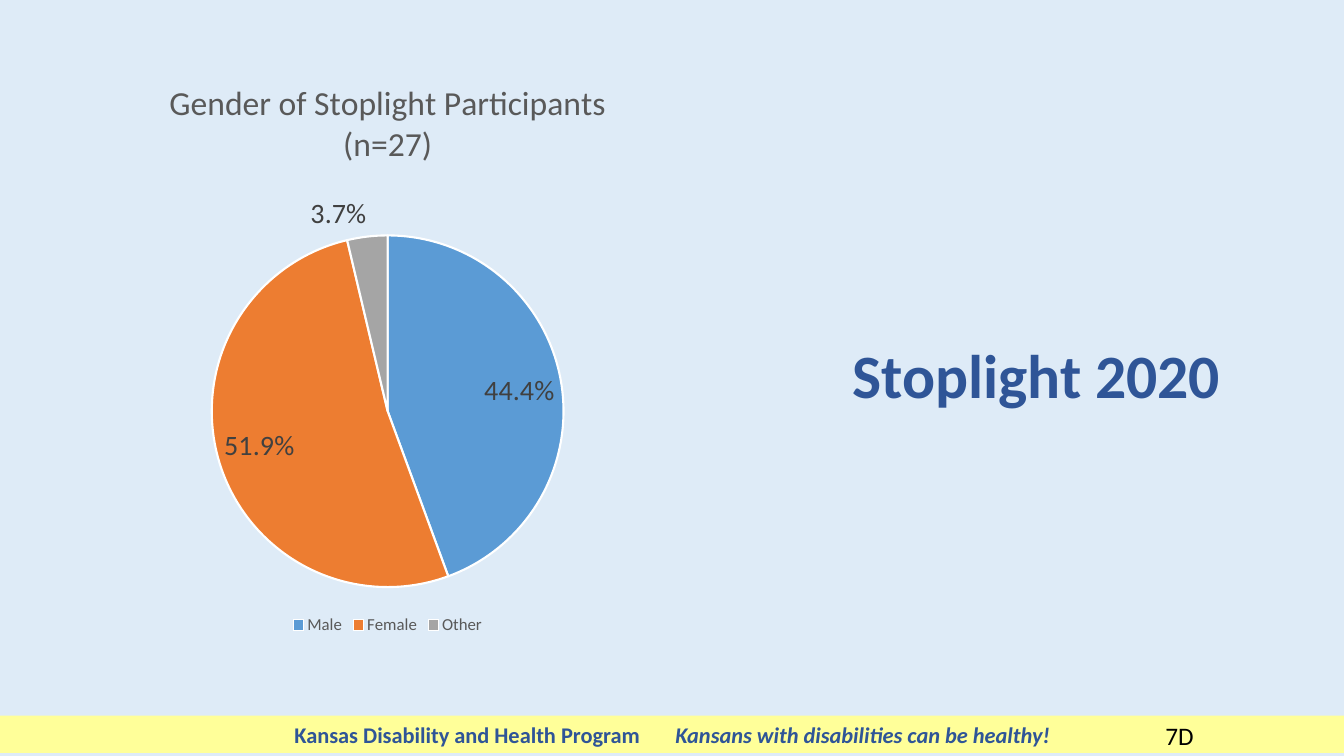
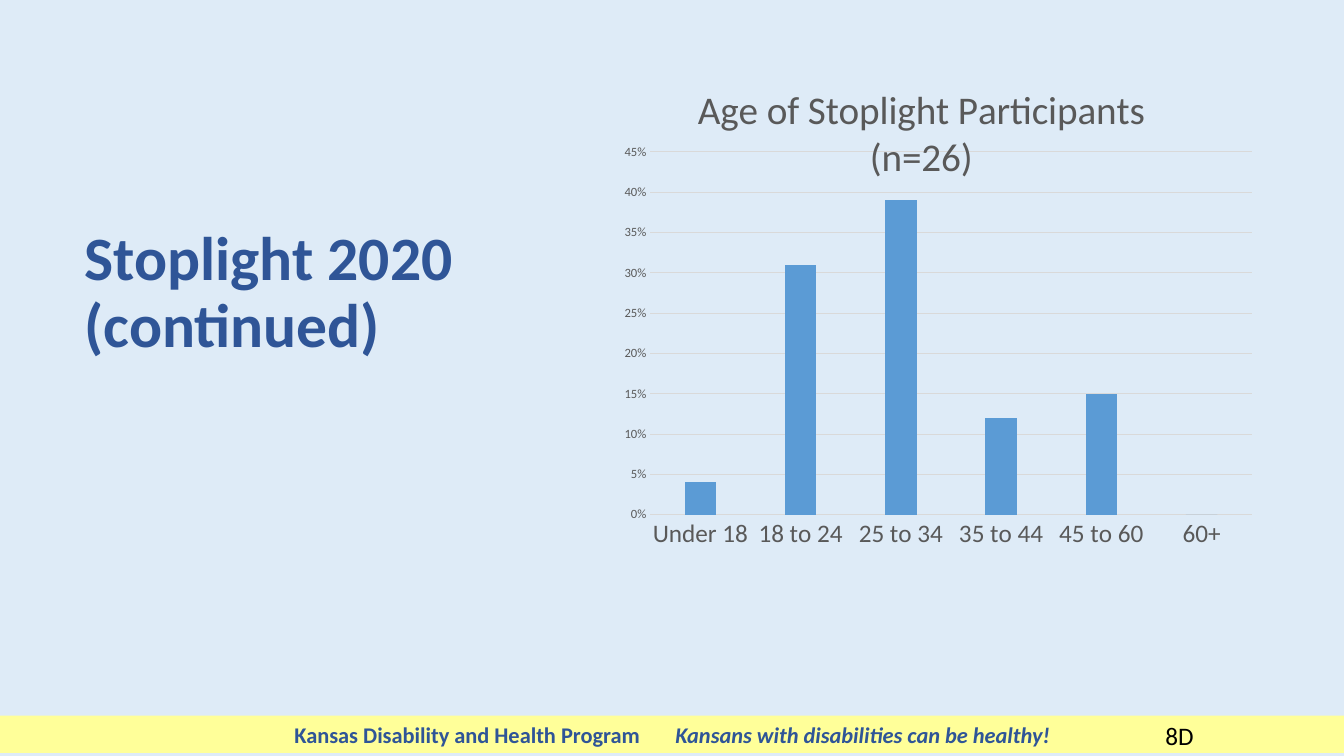
from pptx import Presentation, util as u
from pptx.chart.data import CategoryChartData
from pptx.dml.color import RGBColor
from pptx.enum import chart as ec, shapes, text
from pptx.oxml import parse_xml
from pptx.oxml.ns import nsdecls

SKY = RGBColor(0xDE, 0xEB, 0xF7)
YELLOW = RGBColor(0xFF, 0xFF, 0x99)
NAVY = RGBColor(0x2F, 0x55, 0x97)
BLUE = RGBColor(0x5B, 0x9B, 0xD5)
ORANGE = RGBColor(0xED, 0x7D, 0x31)
GRAY = RGBColor(0xA5, 0xA5, 0xA5)
DARK = RGBColor(0x40, 0x40, 0x40)
MID = RGBColor(0x59, 0x59, 0x59)
PALE = RGBColor(0xD9, 0xD9, 0xD9)
WHITE = RGBColor(0xFF, 0xFF, 0xFF)
BLACK = RGBColor(0, 0, 0)
FONT = "Calibri"

# Content
PROGRAM = "Kansas Disability and Health Program"
MOTTO = "Kansans with disabilities can be healthy!"
GENDER = {
    "kind": ec.XL_CHART_TYPE.PIE, "box": (0.58, 0.62, 6.53, 5.72),
    "title": ("Gender of Stoplight Participants", "(n=27)"), "size": 24,
    "data": {"Male": 0.444, "Female": 0.519, "Other": 0.037},
    "plot": (0.23, 0.3, 0.54, 0.61),
}
AGE = {
    "kind": ec.XL_CHART_TYPE.COLUMN_CLUSTERED, "box": (5.86, 0.67, 6.56, 4.93),
    "title": ("Age of Stoplight Participants", "(n=26)"), "size": 28,
    "data": {"Under 18": 0.04, "18 to 24": 0.31, "25 to 34": 0.39,
             "35 to 44": 0.12, "45 to 60": 0.15, "60+": 0},
    "plot": (0.09, 0.17, 0.91, 0.73),
}


def style(font, size, color, bold=False):
    font.name, font.size, font.bold = FONT, u.Pt(size), bold
    font.color.rgb = color


def place(box):
    return [u.Inches(n) for n in box]


def add_text(slide, box, words, size, color, bold=False):
    frame = slide.shapes.add_textbox(*place(box)).text_frame
    frame.word_wrap = True
    para = frame.paragraphs[0]
    para.text = words
    style(para.font, size, color, bold)
    return frame


def add_title(slide, box, words, align):
    frame = add_text(slide, box, words, 44, NAVY, True)
    frame.vertical_anchor = text.MSO_ANCHOR.MIDDLE
    frame.paragraphs[0].alignment = align
    frame.paragraphs[0].line_spacing = 0.9


def add_footer(slide, page):
    band = slide.shapes.add_shape(shapes.MSO_SHAPE.RECTANGLE,
                                  *place((0, 7.1, 13.33, 0.37)))
    band.shadow.inherit = False
    band.fill.solid()
    band.fill.fore_color.rgb = YELLOW
    band.line.fill.background()
    frame = band.text_frame
    frame.margin_left = u.Inches(2.92)
    frame.vertical_anchor = text.MSO_ANCHOR.MIDDLE
    para = frame.paragraphs[0]
    para.alignment = text.PP_ALIGN.LEFT
    # Tab stop where the motto starts
    para._p.get_or_add_pPr().append(parse_xml(
        f'<a:tabLst {nsdecls("a")}><a:tab pos="{u.Inches(3.78)}" algn="l"/></a:tabLst>'))
    para.add_run().text = PROGRAM + "\t"
    motto = para.add_run()
    motto.text = MOTTO
    motto.font.italic = True
    style(para.font, 16, NAVY, True)
    add_text(slide, (11.46, 7.1, 1.74, 0.4), page, 18, BLACK)


def add_chart(slide, spec):
    data = CategoryChartData()
    data.categories = list(spec["data"])
    data.add_series("Series 1", list(spec["data"].values()))
    chart = slide.shapes.add_chart(spec["kind"], *place(spec["box"]), data).chart
    style(chart.font, 10, BLACK)
    frame = chart.chart_title.text_frame
    frame.text = "\n".join(spec["title"])
    for para in frame.paragraphs:
        style(para.font, spec["size"], MID)
    # Fixed inner plot area
    area = chart._chartSpace.chart.plotArea
    for old in area.findall("{*}layout"):
        area.remove(old)
    parts = "".join(f'<c:{tag} val="{val}"/>' for tag, val in zip("xywh", spec["plot"]))
    area.insert(0, parse_xml(
        f'<c:layout {nsdecls("c")}><c:manualLayout><c:layoutTarget val="inner"/>'
        f'<c:xMode val="edge"/><c:yMode val="edge"/>{parts}'
        '</c:manualLayout></c:layout>'))
    return chart


def style_pie(chart):
    chart.has_legend = True
    chart.legend.position = ec.XL_LEGEND_POSITION.BOTTOM
    chart.legend.include_in_layout = False
    style(chart.legend.font, 12, MID)
    plot = chart.plots[0]
    for i, color in enumerate((BLUE, ORANGE, GRAY)):
        part = plot.series[0].points[i].format
        part.fill.solid()
        part.fill.fore_color.rgb = color
        part.line.color.rgb = WHITE
        part.line.width = u.Pt(1.5)
    labels = plot.series[0].data_labels
    labels.show_value = True
    labels.number_format, labels.number_format_is_linked = "0.0%", False
    labels.position = ec.XL_LABEL_POSITION.BEST_FIT
    style(labels.font, 20, DARK)


def style_bars(chart):
    chart.has_legend = False
    plot = chart.plots[0]
    plot.gap_width, plot.overlap, plot.vary_by_categories = 219, -27, False
    fill = plot.series[0].format.fill
    fill.solid()
    fill.fore_color.rgb = BLUE
    cats, vals = chart.category_axis, chart.value_axis
    for axis, size in ((cats, 18), (vals, 9)):
        axis.major_tick_mark = axis.minor_tick_mark = ec.XL_TICK_MARK.NONE
        style(axis.tick_labels.font, size, MID)
    vals.minimum_scale, vals.maximum_scale, vals.major_unit = 0, 0.45, 0.05
    vals.tick_labels.number_format = "0%"
    vals.tick_labels.number_format_is_linked = False
    vals.format.line.fill.background()
    for line in (cats.format.line, vals.major_gridlines.format.line):
        line.color.rgb = PALE
        line.width = u.Pt(0.75)


def main():
    prs = Presentation()
    prs.slide_width, prs.slide_height = u.Inches(13.33), u.Inches(7.5)
    back = prs.slide_master.background.fill
    back.solid()
    back.fore_color.rgb = SKY
    deck = (
        ("7D", "Stoplight 2020", (7.9, 3.03, 4.76, 1.45),
         text.PP_ALIGN.CENTER, GENDER, style_pie),
        ("8D", "Stoplight 2020 (continued)", (0.74, 2.19, 4.01, 1.45),
         text.PP_ALIGN.LEFT, AGE, style_bars),
    )
    for page, words, box, align, spec, finish in deck:
        slide = prs.slides.add_slide(prs.slide_layouts[6])
        add_title(slide, box, words, align)
        finish(add_chart(slide, spec))
        add_footer(slide, page)
    prs.save("out.pptx")


if __name__ == "__main__":
    main()
